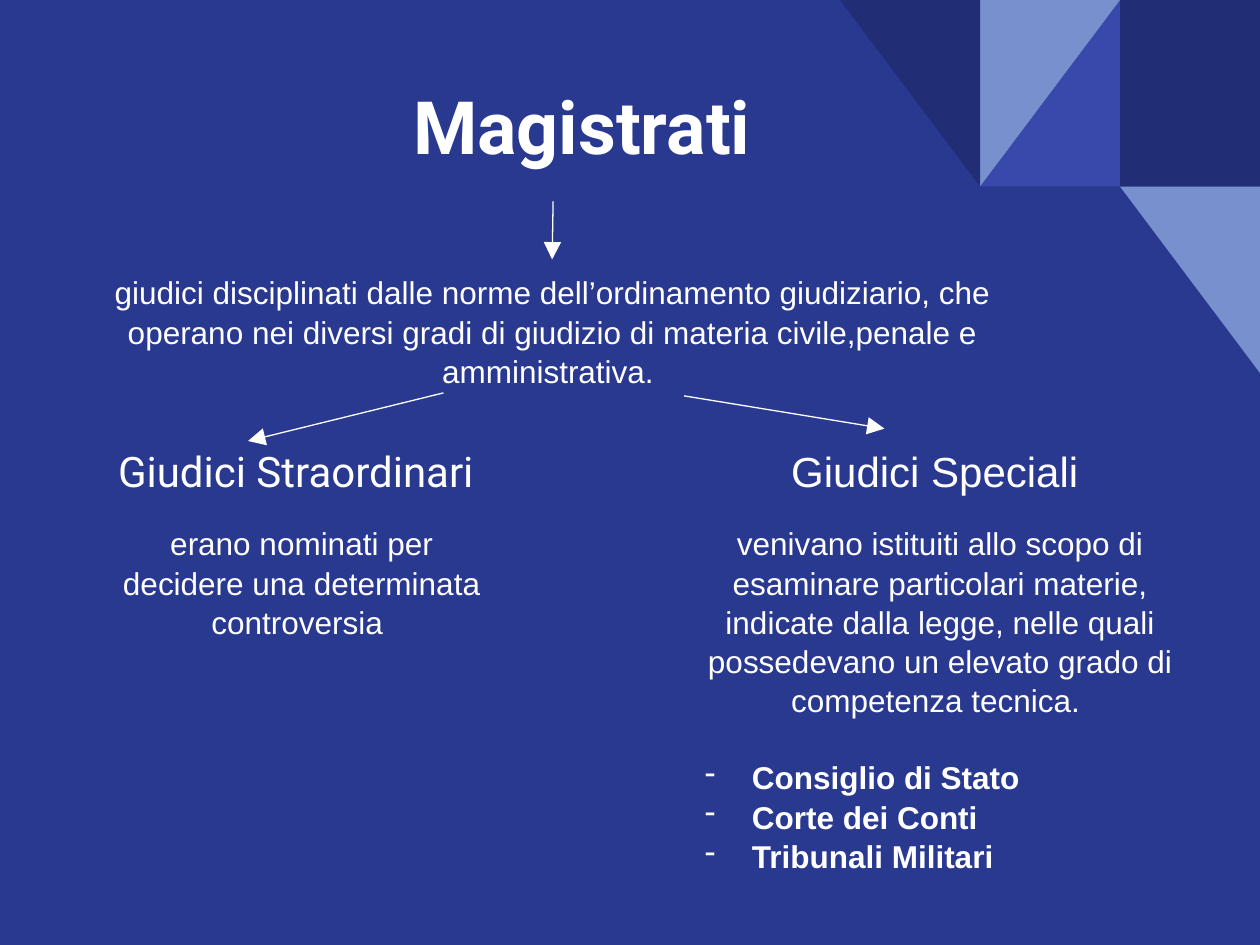
from pptx import Presentation
from pptx.dml.color import RGBColor
from pptx.enum.shapes import MSO_CONNECTOR, MSO_SHAPE
from pptx.enum.text import MSO_ANCHOR, MSO_AUTO_SIZE, PP_ALIGN
from pptx.oxml.ns import qn
from pptx.util import Cm, Pt
from lxml import etree

RECT, TRIANGLE = MSO_SHAPE.RECTANGLE, MSO_SHAPE.RIGHT_TRIANGLE
LEFT, CENTER = PP_ALIGN.LEFT, PP_ALIGN.CENTER
TOP, BOTTOM = MSO_ANCHOR.TOP, MSO_ANCHOR.BOTTOM

# Content (lengths in cm)
WIDTH, HEIGHT = 25.4, 19.05
WHITE, NAVY, DARK, MID, LIGHT = "FFFFFF", "2A3990", "212D74", "3949AB", "7890CD"
TILE_W, TILE_H = WIDTH / 9, 3.76

# column from the right edge, row, shape, colour, rotation, flipped
TILES = [
    (1, 0, RECT, DARK, 0, False),
    (2, 0, TRIANGLE, MID, 0, True),
    (2, 0, TRIANGLE, LIGHT, 180, True),
    (3, 0, TRIANGLE, DARK, 180, False),
    (1, 1, TRIANGLE, LIGHT, 180, False),
]

TITLE = ("Magistrati", (8.08, 0.56, 7.9, 3.1))
SUBTITLE = ("Giudici Straordinari", (2.13, 8.74, 7.9, 1.6))
SPECIAL = ("Giudici Speciali", (15.7, 8.74, 8.81, 2.62))
BODIES = [
    ("giudici disciplinati dalle norme dell’ordinamento giudiziario, che operano "
     "nei diversi gradi di giudizio di materia civile,penale e amministrativa. ",
     (1.42, 5.23, 19.43, 2.16)),
    ("erano nominati per decidere una determinata controversia ",
     (1.9, 10.29, 8.36, 7.65)),
    ("venivano istituiti allo scopo di esaminare particolari materie, indicate "
     "dalla legge, nelle quali possedevano un elevato grado di competenza tecnica. ",
     (13.64, 10.29, 10.62, 8.1)),
]
COURTS = ["Consiglio di Stato", "Corte dei Conti", "Tribunali Militari"]
ARROWS = [
    (11.15, 4.06, 11.13, 5.23),
    (8.94, 7.92, 5, 8.89),
    (13.79, 7.98, 17.83, 8.64),
]

TITLE_FONT = {"name": "Roboto", "size": Pt(42), "bold": True}
HEAD_FONT = {"name": "Roboto", "size": Pt(24), "bold": False}
SPECIAL_FONT = {"name": "Arial", "size": Pt(24), "bold": False}
BODY_FONT = {"name": "Arial", "size": Pt(18), "bold": False}
COURT_FONT = {**BODY_FONT, "bold": True}
LINE_PITCH = 1.04


def rgb(value):
    return RGBColor.from_string(value)


def add_run(p, text, font, align, spacing=1.0):
    p.alignment = align
    p.line_spacing = spacing
    p.space_before = Pt(0)
    r = p.add_run()
    r.text = text
    for key, value in font.items():
        setattr(r.font, key, value)
    r.font.color.rgb = rgb(WHITE)


def fill_text(sp, content, font, align=LEFT, anchor=TOP, spacing=1.0):
    text, box = content
    sp.left, sp.top, sp.width, sp.height = map(Cm, box)
    tf = sp.text_frame
    frame = {"word_wrap": True, "auto_size": MSO_AUTO_SIZE.NONE,
             "vertical_anchor": anchor}
    frame.update({f"margin_{side}": Cm(0.25)
                  for side in ("left", "top", "right", "bottom")})
    for key, value in frame.items():
        setattr(tf, key, value)
    add_run(tf.paragraphs[0], text, font, align, spacing)
    return tf


def add_text_box(content, *args, **kwargs):
    sp = slide.shapes.add_textbox(0, 0, 0, 0)
    return fill_text(sp, content, *args, **kwargs)


def add_dash(p):
    pPr = p._p.get_or_add_pPr()
    pPr.set("marL", str(Cm(1.27)))
    pPr.set("indent", str(-Cm(0.95)))
    color = etree.SubElement(pPr, qn("a:buClr"))
    etree.SubElement(color, qn("a:srgbClr"), val=WHITE)
    etree.SubElement(pPr, qn("a:buChar"), char="-")


prs = Presentation()
prs.slide_width, prs.slide_height = Cm(WIDTH), Cm(HEIGHT)
slide = prs.slides.add_slide(prs.slide_layouts[0])
slide.background.fill.solid()
slide.background.fill.fore_color.rgb = rgb(NAVY)

# Corner mosaic
for column, row, kind, color, rotation, flipped in TILES:
    sp = slide.shapes.add_shape(kind, Cm(WIDTH - column * TILE_W), Cm(row * TILE_H),
                                Cm(TILE_W), Cm(TILE_H))
    sp.shadow.inherit = False
    sp.fill.solid()
    sp.fill.fore_color.rgb = rgb(color)
    sp.line.fill.background()
    sp.rotation = rotation
    if flipped:
        sp.element.spPr.xfrm.set("flipH", "1")

# Headings
fill_text(slide.shapes.title, TITLE, TITLE_FONT, anchor=BOTTOM)
fill_text(slide.placeholders[1], SUBTITLE, HEAD_FONT)
add_text_box(SPECIAL, SPECIAL_FONT)

# Descriptions, the last one followed by the list of courts
for body in BODIES:
    tf = add_text_box(body, BODY_FONT, CENTER, spacing=LINE_PITCH)
for i, court in enumerate(COURTS):
    p = tf.add_paragraph()
    add_run(p, court, COURT_FONT, LEFT, LINE_PITCH)
    if i == 0:
        p.space_before = Pt(21.5)
    add_dash(p)

# Arrows
for x1, y1, x2, y2 in ARROWS:
    line = slide.shapes.add_connector(MSO_CONNECTOR.STRAIGHT,
                                      Cm(x1), Cm(y1), Cm(x2), Cm(y2))
    line.line.color.rgb = rgb(WHITE)
    line.line.width = Pt(0.75)
    ln = line.line._get_or_add_ln()
    etree.SubElement(ln, qn("a:tailEnd"), type="triangle", w="lg", len="lg")
    etree.SubElement(line.element.spPr, qn("a:effectLst"))

prs.save("out.pptx")
